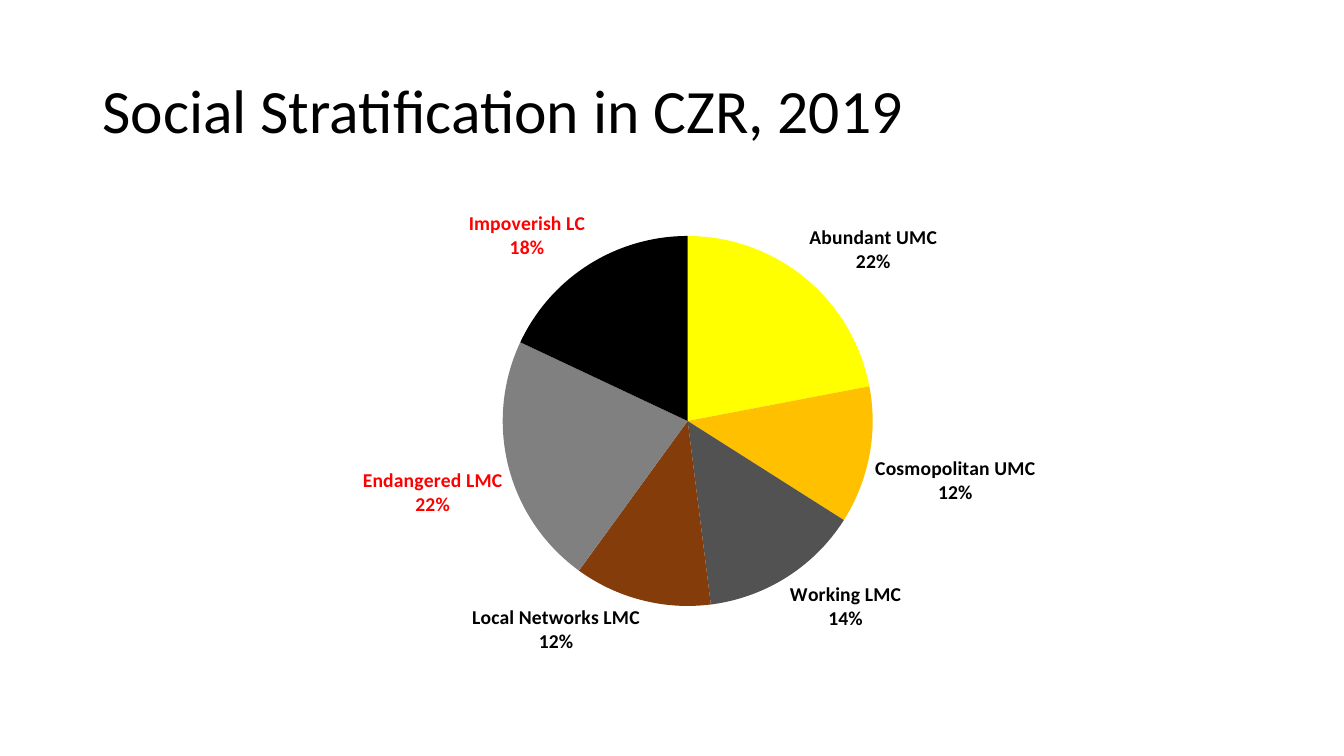
from lxml.etree import SubElement
from pptx import Presentation
from pptx.chart.data import CategoryChartData
from pptx.dml.color import RGBColor
from pptx.enum.chart import XL_CHART_TYPE, XL_LABEL_POSITION
from pptx.enum.text import MSO_ANCHOR
from pptx.oxml import parse_xml
from pptx.oxml.ns import nsdecls, qn
from pptx.util import Cm, Pt

BLACK = RGBColor(0x00, 0x00, 0x00)
RED = RGBColor(0xFF, 0x00, 0x00)
YELLOW = RGBColor(0xFF, 0xFF, 0x00)
AMBER = RGBColor(0xFF, 0xC0, 0x00)
DARK_GREY = RGBColor(0x52, 0x52, 0x52)
BROWN = RGBColor(0x84, 0x3C, 0x0B)
GREY = RGBColor(0x80, 0x80, 0x80)

CLASSES = [
    ("Abundant UMC", 22, YELLOW, BLACK),
    ("Cosmopolitan UMC", 12, AMBER, BLACK),
    ("Working LMC", 14, DARK_GREY, BLACK),
    ("Local Networks LMC", 12, BROWN, BLACK),
    ("Endangered LMC", 22, GREY, RED),
    ("Impoverish LC", 18, BLACK, RED),
]
PIE_AREA = {"x": 0.31, "y": 0.1, "w": 0.41, "h": 0.76}
LABEL_FLAGS = {"showVal": "0", "showCatName": "1", "showPercent": "1"}


def style_font(font, color, **formats):
    """Apply the slide's typeface, a colour and further format values."""
    font.color.rgb = color
    for name, value in {"name": "Calibri", **formats}.items():
        setattr(font, name, value)


def add_heading(slide, left, top, width, height):
    """Place the heading, centred vertically in its box."""
    frame = slide.shapes.add_textbox(left, top, width, height).text_frame
    frame.word_wrap = True
    frame.vertical_anchor = MSO_ANCHOR.MIDDLE
    heading = frame.paragraphs[0]
    heading.line_spacing = 0.9
    heading.text = "Social Stratification in CZR, 2019"
    style_font(heading.runs[0].font, BLACK, size=Pt(44))


def set_pie_area(chart):
    """Fix the pie's place as fractions of the chart's box."""
    plot_area = chart._chartSpace.chart.plotArea
    for layout in plot_area.findall(qn("c:layout")):
        plot_area.remove(layout)
    modes = '<c:layoutTarget val="inner"/><c:xMode val="edge"/><c:yMode val="edge"/>'
    sizes = "".join(f'<c:{side} val="{part}"/>' for side, part in PIE_AREA.items())
    plot_area.insert(0, parse_xml(
        f'<c:layout {nsdecls("c")}><c:manualLayout>{modes}{sizes}</c:manualLayout></c:layout>'))


def add_class_pie(slide, left, top, width, height):
    """Place the pie of social classes with labels outside the slices."""
    names, shares, _, _ = zip(*CLASSES)
    shares_data = CategoryChartData()
    shares_data.categories = names
    shares_data.add_series("Series 1", shares)
    chart = slide.shapes.add_chart(
        XL_CHART_TYPE.PIE, left, top, width, height, shares_data).chart
    chart.has_legend = False
    chart.has_title = False
    style_font(chart.font, BLACK, size=Pt(10))
    set_pie_area(chart)

    pie = chart.plots[0]
    pie.vary_by_categories = True
    classes = pie.series[0]
    label_formats = {
        "show_value": False, "show_category_name": True,
        "show_percentage": True, "position": XL_LABEL_POSITION.OUTSIDE_END,
    }
    for name, value in label_formats.items():
        setattr(classes.data_labels, name, value)
    style_font(classes.data_labels.font, BLACK, size=Pt(14), bold=True)

    for index, (_, _, fill_color, label_color) in enumerate(CLASSES):
        point = classes.points[index]
        point.format.fill.solid()
        point.format.fill.fore_color.rgb = fill_color
        point.format.line.fill.background()
        style_font(point.data_label.font, label_color, size=Pt(14), bold=True)
        point.data_label.position = XL_LABEL_POSITION.OUTSIDE_END
    for label in chart._chartSpace.xpath(".//c:dLbl"):
        for flag, value in LABEL_FLAGS.items():
            label.find(qn(f"c:{flag}")).set("val", value)
        SubElement(label, qn("c:separator")).text = "\n"


def main():
    """Build the slide and save it."""
    deck = Presentation()
    deck.slide_width, deck.slide_height = Cm(33.87), Cm(19.05)
    slide = deck.slides.add_slide(deck.slide_layouts[6])
    add_heading(slide, Cm(2.33), Cm(1.02), Cm(29.21), Cm(3.68))
    add_class_pie(slide, Cm(5.56), Cm(4.72), Cm(22.86), Cm(12.27))
    deck.save("out.pptx")


if __name__ == "__main__":
    main()
